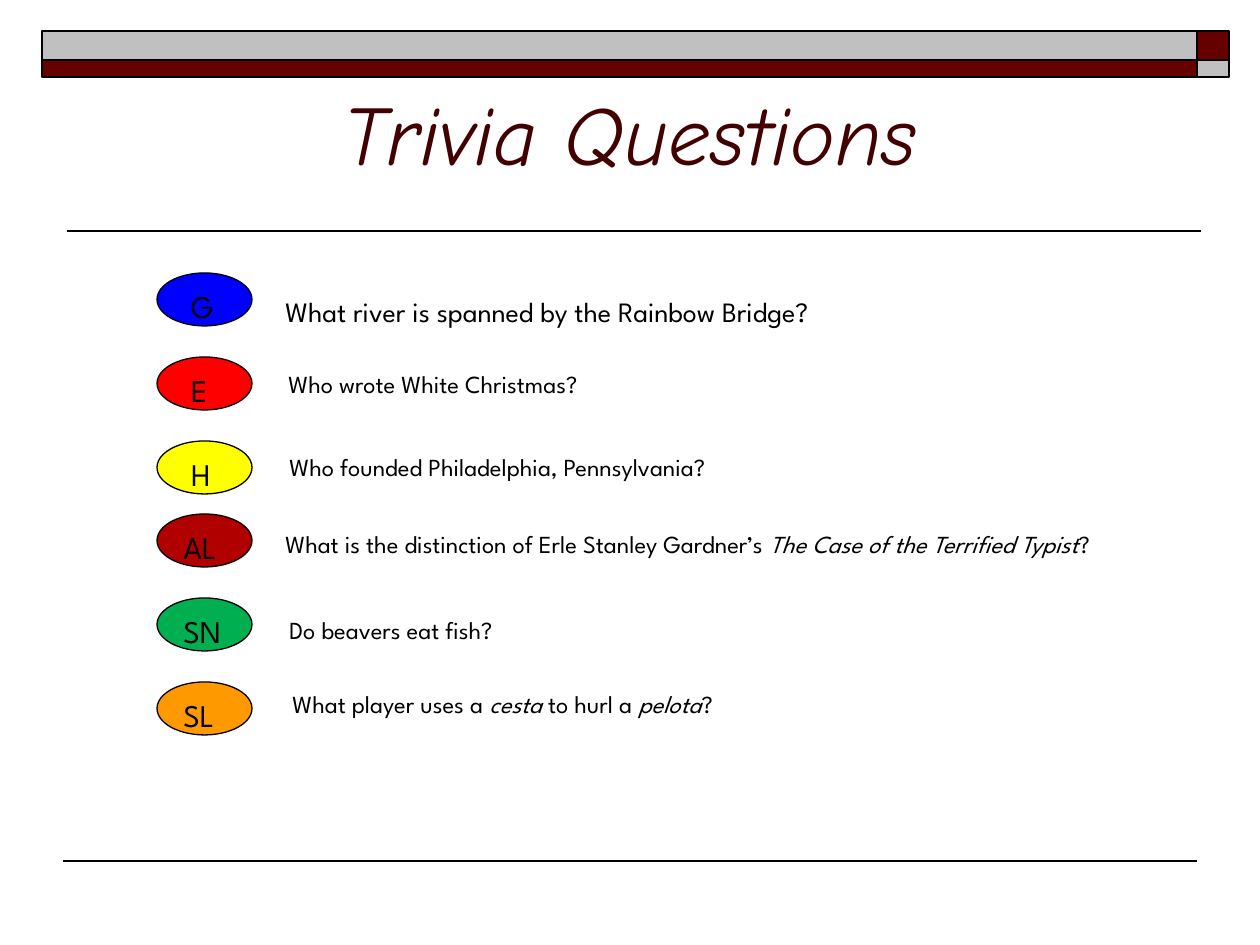
from dataclasses import dataclass
from lxml import etree
from pptx import Presentation
from pptx.dml.color import RGBColor
from pptx.enum.shapes import MSO_CONNECTOR, MSO_SHAPE
from pptx.enum.text import MSO_ANCHOR, PP_ALIGN
from pptx.oxml.ns import qn
from pptx.util import Emu, Pt


@dataclass(frozen=True)
class Theme:
    ink: str = "000000"
    maroon: str = "660000"
    silver: str = "C0C0C0"
    title_color: str = "420000"
    title_font: str = "Comic Neue"
    body_font: str = "League Spartan"
    title_size: int = 48
    badge_size: int = 18
    lead_size: int = 16
    question_size: int = 14


theme = Theme()
SCALE = 914400 / 126


def px(*lengths):
    return [Emu(round(length * SCALE)) for length in lengths]


def add_run(paragraph, text, size, font=theme.body_font, color=theme.ink, italic=False):
    run = paragraph.add_run()
    run.text = text
    run.font.name = font
    run.font.size = Pt(size)
    run.font.italic = italic
    run.font.color.rgb = RGBColor.from_string(color)


prs = Presentation()
prs.slide_width, prs.slide_height = px(1260, 945)
slide = prs.slides.add_slide(prs.slide_layouts[6])
shapes = slide.shapes

for left, right, y, weight in [(67, 1201, 231, 1), (63, 1197, 861, 0.75)]:
    rule = shapes.add_connector(MSO_CONNECTOR.STRAIGHT, *px(left, y, right, y))
    rule.line.color.rgb = RGBColor.from_string(theme.ink)
    rule.line.width = Pt(weight)
    etree.SubElement(rule._element.spPr, qn("a:effectLst"))

columns = [(42, 1155), (1197, 32)]
bands = [(31, 29, (theme.silver, theme.maroon)), (60, 17, (theme.maroon, theme.silver))]
for top, height, colors in bands:
    for (left, width), color in zip(columns, colors):
        bar = shapes.add_shape(MSO_SHAPE.RECTANGLE, *px(left, top, width, height))
        bar.shadow.inherit = False
        bar.fill.solid()
        bar.fill.fore_color.rgb = RGBColor.from_string(color)
        bar.line.color.rgb = RGBColor.from_string(theme.ink)
        bar.line.width = Pt(1)

title = shapes.add_textbox(*px(63, 31, 1134, 158)).text_frame
title.word_wrap = True
title.vertical_anchor = MSO_ANCHOR.BOTTOM
title.paragraphs[0].alignment = PP_ALIGN.CENTER
add_run(title.paragraphs[0], "Trivia Questions", theme.title_size,
        theme.title_font, theme.title_color, True)

small = theme.question_size
questions = [
    (" G", "0000FF", 273, 288, 777, theme.lead_size,
     [("What river is spanned by the Rainbow Bridge?", False)]),
    (" E", "FF0000", 276, 363, 910, small, [("Who wrote White Christmas?", False)]),
    (" H", "FFFF00", 277, 446, 762, small,
     [("Who founded Philadelphia, Pennsylvania?", False)]),
    ("AL", "B10000", 273, 523, 892, small,
     [("What is the distinction of Erle Stanley Gardner’s ", False),
      ("The Case of the Terrified Typist", True), ("?", False)]),
    ("SN", "00B050", 277, 609, 819, small, [("Do beavers eat fish?", False)]),
    ("SL", "FF9900", 280, 683, 903, small,
     [("What player uses a ", False), ("cesta", True), (" to hurl a ", False),
      ("pelota", True), ("?", False)]),
]
GROUP_TOPS = (273, 514)
BADGE_PITCH = 84

for index, (category, color, left, top, width, size, pieces) in enumerate(questions):
    group, row = divmod(index, 3)
    badge_top = GROUP_TOPS[group] + row * BADGE_PITCH
    badge = shapes.add_shape(MSO_SHAPE.OVAL, *px(157, badge_top, 95, 53))
    badge.shadow.inherit = False
    badge.fill.solid()
    badge.fill.fore_color.rgb = RGBColor.from_string(color)
    badge.line.color.rgb = RGBColor.from_string(theme.ink)
    badge.line.width = Pt(0.75)
    badge.text_frame.vertical_anchor = MSO_ANCHOR.TOP
    letters = badge.text_frame.paragraphs[0]
    letters.alignment = PP_ALIGN.LEFT
    add_run(letters, category, theme.badge_size)

    question = shapes.add_textbox(*px(left, top, width, 43)).text_frame
    question.word_wrap = True
    for text, italic in pieces:
        add_run(question.paragraphs[0], text, size, italic=italic)

prs.save("out.pptx")
